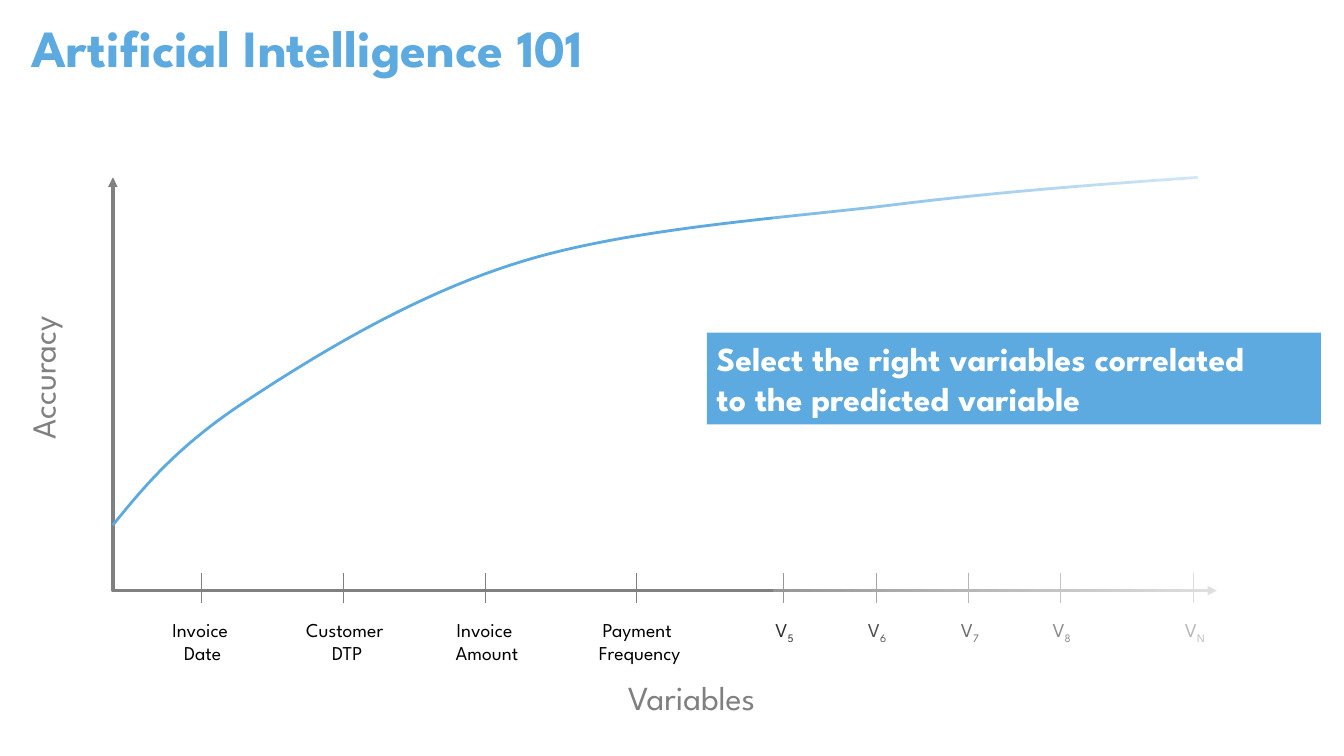
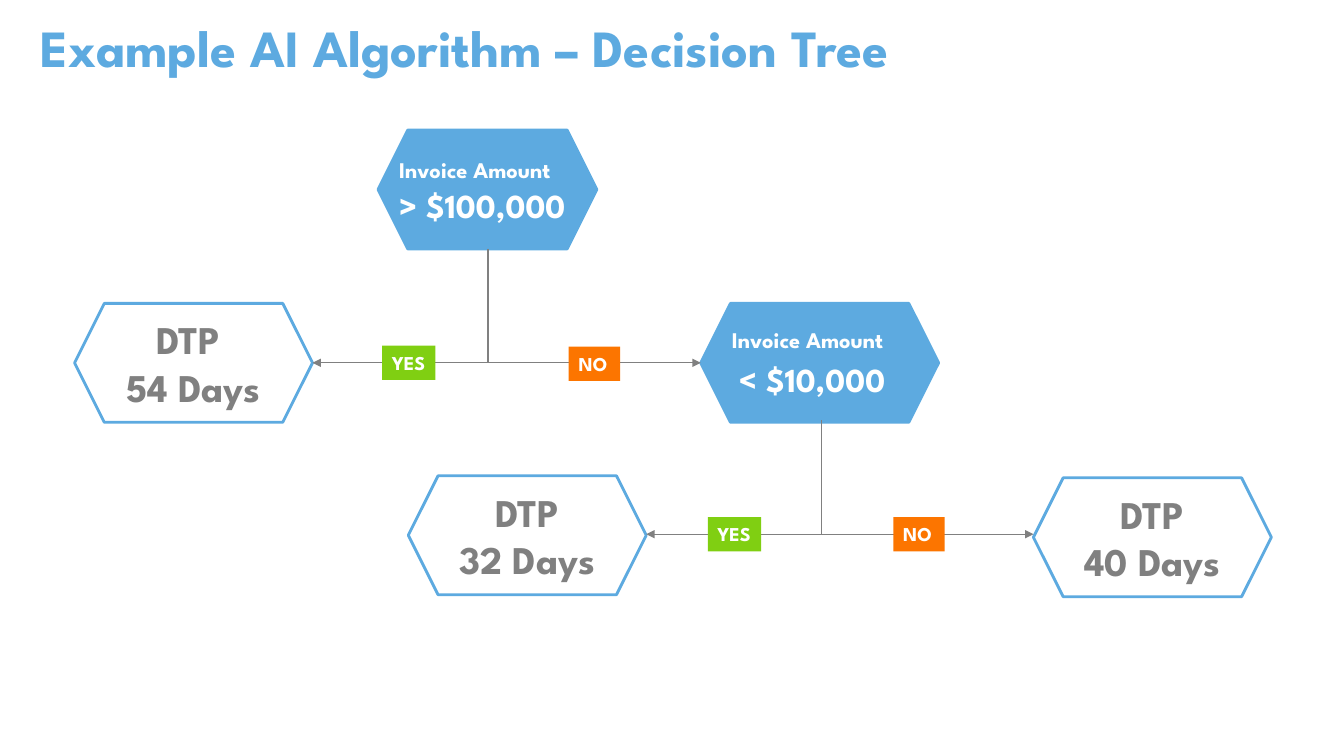
from lxml import etree
from pptx import Presentation
from pptx.dml.color import RGBColor
from pptx.enum import shapes, text
from pptx.oxml import ns
from pptx.util import Pt

PX = 9144  # 100 px to the inch
FONT = "League Spartan"
HEX = {"blue": "5DAAE0", "gray": "808080", "green": "80CF12",
       "orange": "FC7500", "white": "FFFFFF", "black": "000000"}

# Slide 1: chart of accuracy against variables
AXIS = (112, 176, 1207, 586)
NAMES = [("Names", 200, ["Invoice ", "Date"]), ("Names", 341, ["Customer", " DTP"]),
         ("Names", 482, ["Invoice ", "Amount"]), ("Names", 631, ["Payment", " Frequency"])]
MARKS = [(777, "5"), (869, "6"), (961, "7"), (1052, "8"), (1184, "N")]
TICKS = [(x, lines, "") for _, x, lines in NAMES] + [(x, ["V"], sub) for x, sub in MARKS]
CURVE = [(112, 521), (145, 480), (179, 440), (247, 396), (314, 352), (413, 291),
         (519, 259), (624, 227), (769, 217), (880, 204), (992, 190), (1090, 183),
         (1188, 176)]
FADE = (767, 0, 566, 750)
STOPS = [(0, 17), (0.93, 87)]  # position, opacity in percent
ADVICE = ["Select the right variables correlated", "to the predicted variable"]

# Slide 2: decision tree
TESTS = [((375, 129, 217, 118), (386, 150, "Invoice Amount"), (386, 179, "> $100,000")),
         ((695, 301, 236, 118), (716, 319, "Invoice Amount"), (723, 351, "< $10,000"))]
LEAVES = [(1025, 474, ["DTP", "40 Days"]), (74, 301, ["DTP ", "54 Days"]),
          (405, 472, ["DTP", "32 Days"])]
FORKS = [(484, 247, 310, 695), (815, 417, 641, 1025)]  # stem x, top, yes x, no x
DROP = 113
TAGS = [("YES", 379, 343), ("YES", 702, 513), ("NO", 886, 513), ("NO", 564, 344)]
KINDS = {"YES": ("green", 53), "NO": ("orange", 51)}


def px(*vals):
    return [round(v * PX) for v in vals]


def rgb(name):
    return RGBColor.from_string(HEX[name])


def write(frame, lines, size, color, bold=False, align="LEFT", wrap=False):
    frame.word_wrap = wrap
    frame.text = "\n".join(lines)
    for para in frame.paragraphs:
        para.alignment = getattr(text.PP_ALIGN, align)
        font = para.font
        font.name, font.size, font.bold = FONT, Pt(size), bold
        font.color.rgb = rgb(color)


def label(slide, box, lines, size, color, fill=None, **style):
    item = slide.shapes.add_textbox(*px(*box))
    if fill:
        item.fill.solid()
        item.fill.fore_color.rgb = rgb(fill)
    write(item.text_frame, lines, size, color, **style)
    return item


def line(slide, ends, width=0.75, heads=(), bent=False):
    kind = shapes.MSO_CONNECTOR.ELBOW if bent else shapes.MSO_CONNECTOR.STRAIGHT
    item = slide.shapes.add_connector(kind, *px(*ends))
    item.line.color.rgb = rgb("gray")
    item.line.width = Pt(width)
    props = item._element.spPr
    for head in heads:
        etree.SubElement(props.find(ns.qn("a:ln")), ns.qn("a:" + head), type="triangle")
    etree.SubElement(props, ns.qn("a:effectLst"))
    if bent:  # turn at the very start, so the line first runs down
        guides = props.find(ns.qn("a:prstGeom")).get_or_add_avLst()
        etree.SubElement(guides, ns.qn("a:gd"), name="adj1", fmla="val 0")


def hexagon(slide, box, filled):
    item = slide.shapes.add_shape(shapes.MSO_SHAPE.HEXAGON, *px(*box))
    item.shadow.inherit = False
    item.line.color.rgb = rgb("blue")
    item.line.width = Pt(2)
    if filled:
        item.fill.solid()
        item.fill.fore_color.rgb = rgb("blue")
    else:
        item.fill.background()
    return item


def bezier(pts, steps=24):
    """Points along a chain of cubic curves."""
    out = [pts[0]]
    for i in range(0, len(pts) - 1, 3):
        a, b, c, d = pts[i:i + 4]
        for n in range(1, steps + 1):
            t = n / steps
            s = 1 - t
            out.append(tuple(s**3 * p + 3 * s * s * t * q + 3 * s * t * t * r + t**3 * v
                             for p, q, r, v in zip(a, b, c, d)))
    return out


def start(deck, title, left, width):
    slide = deck.slides.add_slide(deck.slide_layouts[5])
    head = slide.shapes.title
    head.left, head.top, head.width, head.height = px(left, 0, width, 100)
    frame = head.text_frame
    write(frame, [title], 37.3, "blue", bold=True, wrap=True)
    frame.auto_size = text.MSO_AUTO_SIZE.NONE
    frame.vertical_anchor = text.MSO_ANCHOR.MIDDLE
    frame.paragraphs[0].line_spacing = 0.9
    return slide


def chart(deck):
    slide = start(deck, "Artificial Intelligence 101", 21, 1150)

    # Axes and their names
    line(slide, AXIS, 2.25, ("headEnd", "tailEnd"), bent=True)
    label(slide, (613, 667, 171, 50), ["Variables"], 24, "gray")
    side = label(slide, (17, 274, 61, 172), ["Accuracy"], 24, "gray")
    side.text_frame._txBody.bodyPr.set("vert", "vert270")

    # Ticks
    for x, lines, sub in TICKS:
        line(slide, (x, 568, x, 598))
        wide, high = (42, 34) if sub else (112, 57)
        item = label(slide, (x + 1 - wide / 2, 608, wide, high), lines, 14, "black",
                     align="CENTER")
        if sub:
            run = item.text_frame.paragraphs[0].add_run()
            run.text = sub
            run._r.get_or_add_rPr().set("baseline", "-25000")

    # Curve
    pts = [px(*p) for p in bezier(CURVE)]
    pen = slide.shapes.build_freeform(*pts[0], scale=1.0)
    pen.add_line_segments(pts[1:], close=False)
    curve = pen.convert_to_shape()
    curve.shadow.inherit = False
    curve.fill.background()
    curve.line.color.rgb = rgb("blue")
    curve.line.width = Pt(2)

    # White fade to the right
    fade = slide.shapes.add_shape(shapes.MSO_SHAPE.RECTANGLE, *px(*FADE))
    fade.shadow.inherit = False
    fade.line.fill.background()
    fade.fill.gradient()
    fade.fill.gradient_angle = 0
    for stop, (pos, alpha) in zip(fade.fill.gradient_stops, STOPS):
        stop.position = pos
        stop.color.rgb = rgb("white")
        tint = stop._gs.find(ns.qn("a:srgbClr"))
        etree.SubElement(tint, ns.qn("a:alpha"), val=str(alpha * 1000))

    # Advice
    label(slide, (701, 330, 609, 91), ADVICE, 24, "white", fill="blue", bold=True, wrap=True)


def tree(deck):
    slide = start(deck, "Example AI Algorithm – Decision Tree", 30, 1238)

    # Nodes
    for box, _, _ in TESTS:
        hexagon(slide, box, True)
    for x, y, lines in LEAVES:
        frame = hexagon(slide, (x, y, 236, 118), False).text_frame
        write(frame, lines, 28, "gray", bold=True, align="CENTER", wrap=True)
        frame.vertical_anchor = text.MSO_ANCHOR.MIDDLE

    # Branches and their tags
    for x, y, yes, no in FORKS:
        for end in (no, yes):
            line(slide, (x, y, end, y + DROP), heads=("tailEnd",), bent=True)
    for word, x, y in TAGS:
        fill, wide = KINDS[word]
        label(slide, (x, y, wide, 34), [word], 14, "white", fill=fill, bold=True)

    # Tests
    for _, *parts in TESTS:
        for (x, y, words), size, high in zip(parts, (16, 24), (37, 50)):
            wide = 193 if size == 16 or "100" in words and ">" in words else 173
            label(slide, (x, y, wide, high), [words], size, "white", bold=True)


def main():
    deck = Presentation()
    deck.slide_width, deck.slide_height = px(1333, 750)
    chart(deck)
    tree(deck)
    deck.save("out.pptx")


if __name__ == "__main__":
    main()
